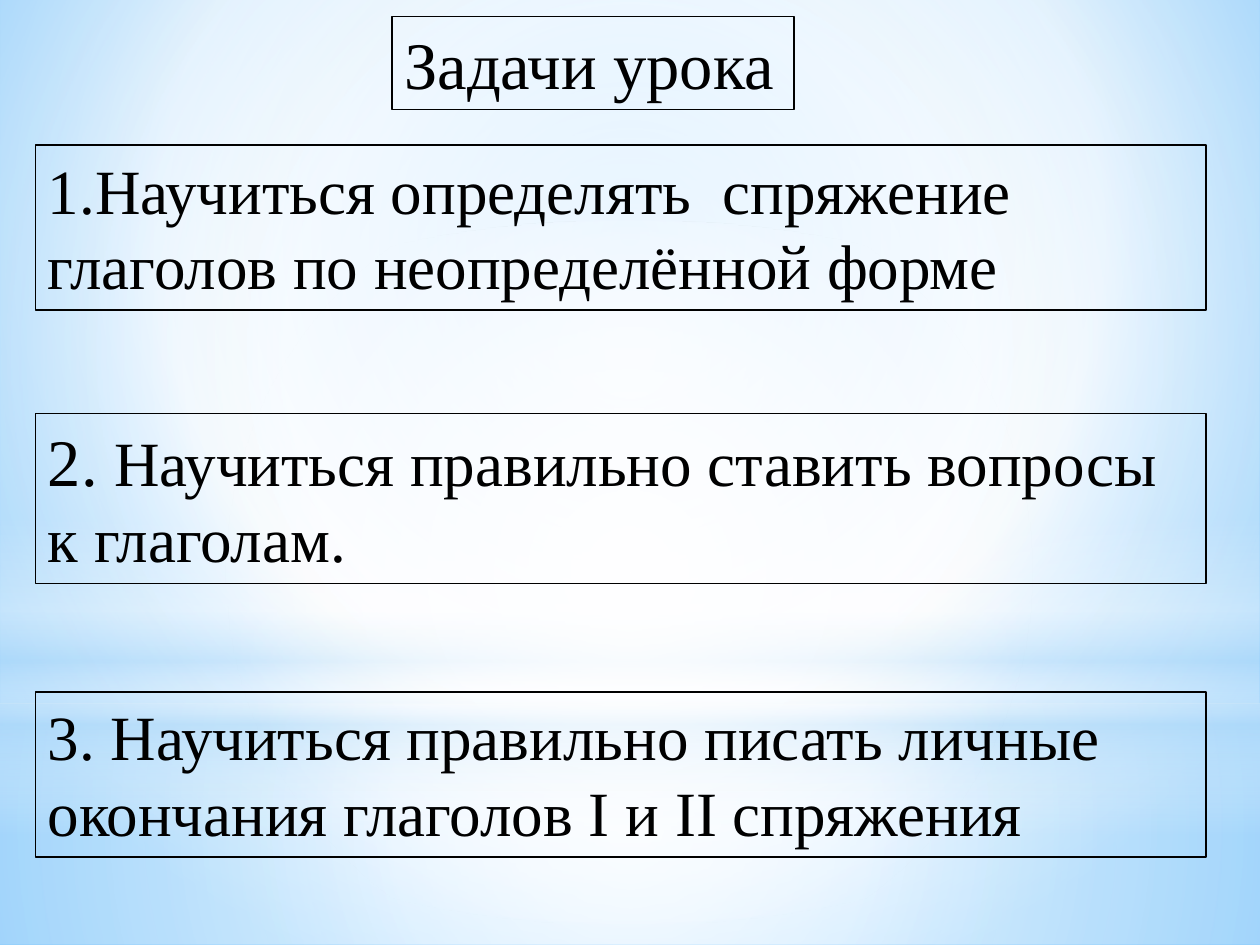
"""Build the lesson goals slide: a soft blue backdrop and four outlined text boxes."""
from typing import NamedTuple, Optional

from lxml import etree
from pptx import Presentation
from pptx import util as u
from pptx.dml.color import RGBColor
from pptx.enum import shapes, text
from pptx.oxml import ns

BLACK = RGBColor(0x00, 0x00, 0x00)
WHITE = RGBColor(0xFF, 0xFF, 0xFF)
PALE = RGBColor(0xB4, 0xDC, 0xFA)
SKY = RGBColor(0x9E, 0xD5, 0xFF)
AZURE = RGBColor(0x5B, 0xB9, 0xFF)
FONT = "Times New Roman"
WIDTH, HEIGHT, HORIZON = 720, 540, 401.8
GOAL_LEFT, GOAL_WIDTH = 20.2, 668.9


class Stop(NamedTuple):
    pos: int
    color: RGBColor
    opacity: int = 100


class Gradient(NamedTuple):
    stops: tuple[Stop, ...]
    focus: Optional[tuple[int, int, int, int]] = (50, 50, 50, 50)


class Glow(NamedTuple):
    kind: shapes.MSO_SHAPE
    top: float
    height: float
    gradient: Gradient


class Box(NamedTuple):
    left: float
    top: float
    width: float
    height: float
    size: int
    body: str
    lead: str = ""
    lead_size: int = 38


BACKDROP = Gradient((Stop(0, SKY), Stop(60, WHITE), Stop(100, AZURE)), (20, 10, 20, 60))
GLOWS = (
    Glow(shapes.MSO_SHAPE.RECTANGLE, HORIZON, HEIGHT - HORIZON,
         Gradient((Stop(0, WHITE, 91), Stop(37, WHITE, 76), Stop(100, PALE, 79)))),
    Glow(shapes.MSO_SHAPE.RECTANGLE, 0, HORIZON,
         Gradient((Stop(0, WHITE, 89), Stop(48, WHITE, 62), Stop(100, PALE, 79)))),
    Glow(shapes.MSO_SHAPE.RECTANGLE, 296.6, 180,
         Gradient((Stop(0, WHITE, 0), Stop(29, WHITE, 30), Stop(45, PALE, 40),
                   Stop(55, WHITE, 26), Stop(65, PALE, 60), Stop(100, WHITE, 0)), None)),
    Glow(shapes.MSO_SHAPE.OVAL, 126, HORIZON,
         Gradient((Stop(0, WHITE), Stop(56, WHITE, 0)))),
)
BOXES = (
    Box(224, 9.4, 229.7, 53.3, 38, "Задачи урока"),
    Box(GOAL_LEFT, 236.2, GOAL_WIDTH, 97.2, 36,
        "Научиться правильно ставить вопросы к глаголам.", "2. "),
    Box(GOAL_LEFT, 395.3, GOAL_WIDTH, 94.3, 36,
        "3. Научиться правильно писать личные окончания глаголов I и II спряжения"),
    Box(GOAL_LEFT, 82.8, GOAL_WIDTH, 94.3, 36,
        "1.Научиться определять  спряжение глаголов по неопределённой форме"),
)


def add_node(parent, tag: str, **attrs):
    """Append a DrawingML element with the given attributes."""
    values = {name: str(value) for name, value in attrs.items()}
    return etree.SubElement(parent, ns.qn(f"a:{tag}"), values)


def paint(fill, element, gradient: Gradient) -> None:
    """Give a fill the stops and direction of a gradient."""
    fill.gradient()
    grad = element.find(f".//{ns.qn('a:gradFill')}")
    grad.clear()
    grad.set("rotWithShape", "1")
    stops = add_node(grad, "gsLst")
    for stop in gradient.stops:
        gs = add_node(stops, "gs", pos=stop.pos * 1000)
        color = add_node(gs, "srgbClr", val=stop.color)
        if stop.opacity < 100:
            add_node(color, "alpha", val=stop.opacity * 1000)
    if gradient.focus is None:
        add_node(grad, "lin", ang=90 * 60000, scaled=0)
    else:
        circle = add_node(grad, "path", path="circle")
        sides = {side: value * 1000 for side, value in zip("ltrb", gradient.focus)}
        add_node(circle, "fillToRect", **sides)


def add_glow(s, glow: Glow) -> None:
    """Draw a full-width translucent band or ellipse."""
    sp = s.shapes.add_shape(glow.kind, 0, u.Pt(glow.top), u.Pt(WIDTH), u.Pt(glow.height))
    sp.shadow.inherit = False
    sp.line.fill.background()
    paint(sp.fill, sp.element, glow.gradient)


def add_box(s, box: Box) -> None:
    """Draw an outlined text box."""
    sp = s.shapes.add_textbox(u.Pt(box.left), u.Pt(box.top), u.Pt(box.width), u.Pt(box.height))
    sp.line.color.rgb = BLACK
    sp.line.width = u.Pt(1)
    tf = sp.text_frame
    tf.word_wrap = True
    tf.auto_size = text.MSO_AUTO_SIZE.SHAPE_TO_FIT_TEXT
    p = tf.paragraphs[0]
    p.font.name = FONT
    p.font.size = u.Pt(box.size)
    p.font.color.rgb = BLACK
    if box.lead:
        r = p.add_run()
        r.text = box.lead
        r.font.size = u.Pt(box.lead_size)
    p.add_run().text = box.body


def main() -> None:
    """Create and save the presentation."""
    prs = Presentation()
    prs.slide_width, prs.slide_height = u.Pt(WIDTH), u.Pt(HEIGHT)
    s = prs.slides.add_slide(prs.slide_layouts[6])
    paint(s.background.fill, s.element, BACKDROP)
    for glow in GLOWS:
        add_glow(s, glow)
    for box in BOXES:
        add_box(s, box)
    prs.save("out.pptx")


if __name__ == "__main__":
    main()
